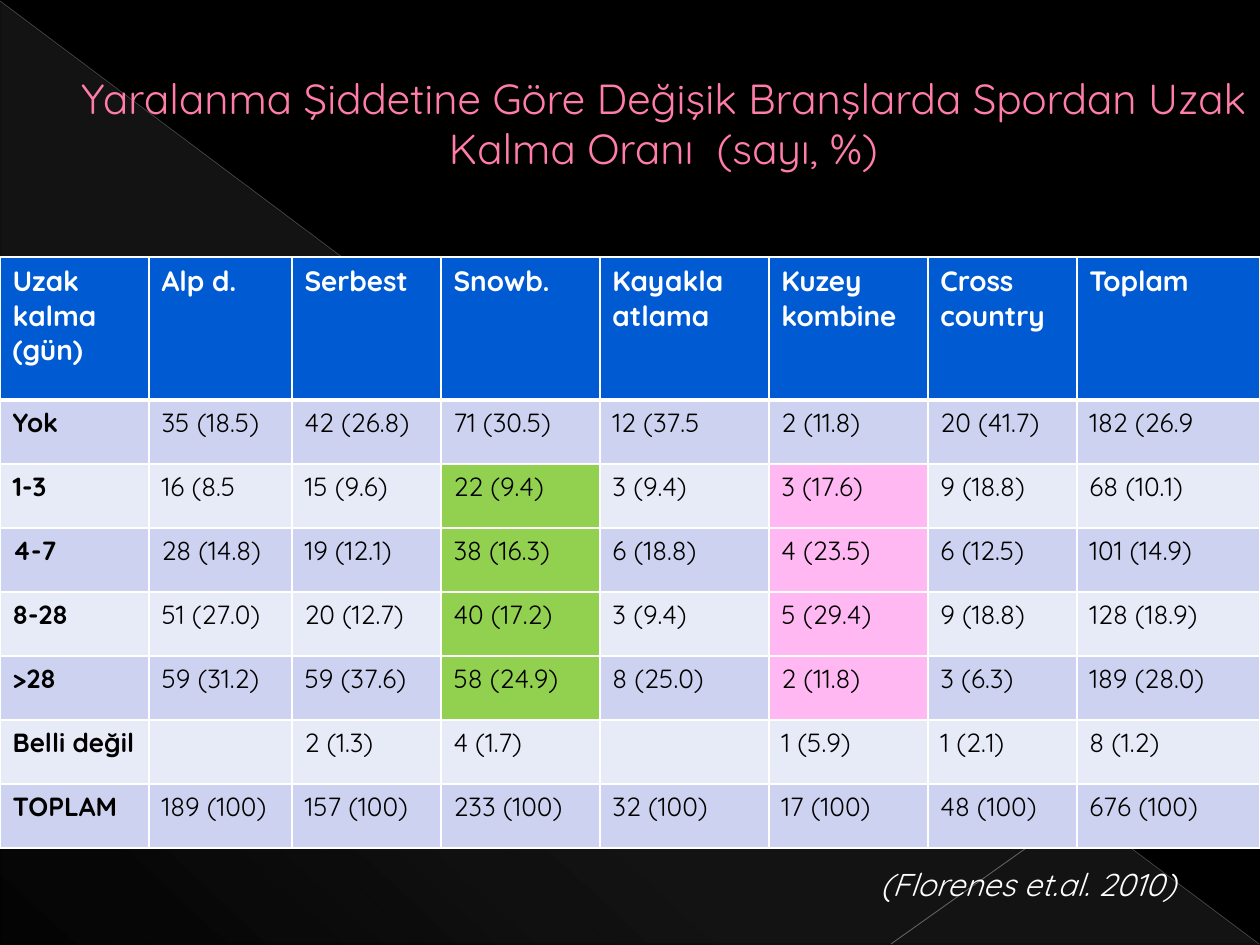
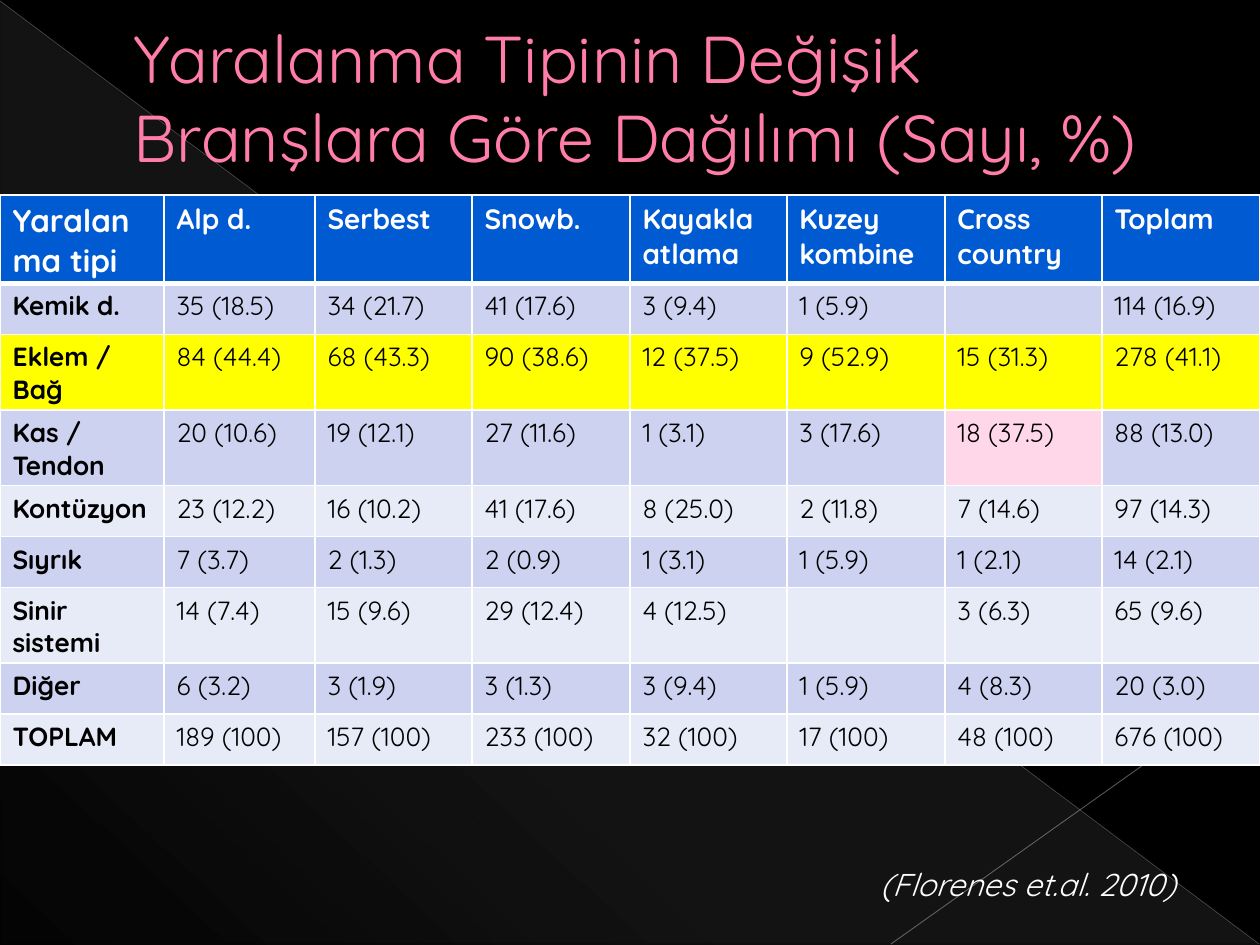
from lxml.etree import SubElement
from pptx import Presentation
from pptx.dml.color import RGBColor
from pptx.enum.shapes import MSO_CONNECTOR, MSO_SHAPE
from pptx.enum.text import MSO_ANCHOR, PP_ALIGN
from pptx.oxml import parse_xml
from pptx.oxml.ns import nsdecls, qn
from pptx.util import Emu, Pt

PX_PER_INCH = 126
WIDTH, HEIGHT = 1260, 945
FONT = "Quicksand"
COLORS = {
    "background": "000000",
    "wedge": "D2D2D2",
    "diagonal": "BFBFBF",
    "corner": "C6C6C6",
    "title": "FF7DA7",
    "white": "FFFFFF",
    "black": "000000",
    "header": "005BD3",
    "band_dark": "CCD2EF",
    "band_light": "E7EAF7",
    "green": "92D050",
    "pink": "FFB8F2",
    "pale_pink": "FFD7E8",
    "yellow": "FFFF00",
}


def px(length):
    return Emu(round(length * 914400 / PX_PER_INCH))


def rgb(name):
    return RGBColor.from_string(COLORS[name])


class Deck:
    """Holds the shared style and the slide being built."""

    def __init__(self):
        self.presentation = Presentation()
        self.presentation.slide_width = px(WIDTH)
        self.presentation.slide_height = px(HEIGHT)
        self.slide = None

    def new_slide(self):
        self.slide = self.presentation.slides.add_slide(self.presentation.slide_layouts[6])
        fill = self.slide.background.fill
        fill.solid()
        fill.fore_color.rgb = rgb("background")
        self.wedge()
        self.line((0, 1), (1259, 944), "diagonal", 0.39, 35)
        self.line((1260, 682), (891, 944), "corner", 0.47, 45)

    def wedge(self):
        """Faint triangle that fades toward the lower left corner."""
        shape = self.slide.shapes.add_shape(
            MSO_SHAPE.RIGHT_TRIANGLE, px(1), px(2), px(1258), px(942))
        shape.shadow.inherit = False
        shape.line.fill.background()
        shape.fill.background()
        stops = "".join(
            f'<a:gs pos="{position * 1000}"><a:srgbClr val="{COLORS["wedge"]}">'
            f'<a:alpha val="{opacity * 1000}"/></a:srgbClr></a:gs>'
            for position, opacity in ((0, 10), (70, 8), (100, 1)))
        gradient = parse_xml(
            f'<a:gradFill {nsdecls("a")} rotWithShape="1"><a:gsLst>{stops}</a:gsLst>'
            f'<a:lin ang="{133 * 60000}" scaled="0"/></a:gradFill>')
        properties = shape.element.spPr
        properties.replace(properties.find(qn("a:noFill")), gradient)

    def line(self, start, end, color, width, opacity):
        connector = self.slide.shapes.add_connector(
            MSO_CONNECTOR.STRAIGHT, *map(px, start + end))
        connector.line.color.rgb = rgb(color)
        connector.line.width = Pt(width)
        properties = connector.element.spPr
        for line_color in properties.iter(qn("a:srgbClr")):
            SubElement(line_color, qn("a:alpha"), val=str(opacity * 1000))
        SubElement(properties, qn("a:effectLst"))

    def style(self, paragraph, size, color, bold=False, italic=False):
        font = paragraph.font
        font.name, font.size = FONT, Pt(size)
        font.bold, font.italic = bold, italic
        font.color.rgb = rgb(color)

    def text(self, content, box, size, color, wrap=True, italic=False):
        frame = self.slide.shapes.add_textbox(*map(px, box)).text_frame
        frame.word_wrap = wrap
        frame.text = content
        self.style(frame.paragraphs[0], size, color, italic=italic)
        return frame

    def title(self, content, box, size, align):
        frame = self.text(content, box, size, "title")
        frame.vertical_anchor = MSO_ANCHOR.MIDDLE
        paragraph = frame.paragraphs[0]
        paragraph.alignment = align
        paragraph_properties = paragraph._p.get_or_add_pPr()
        paragraph_properties.set("marL", str(px(67)))
        paragraph_properties.set("indent", "0")

    def citation(self):
        self.text("(Florenes et.al. 2010)", (868, 859, 340, 50), 18, "white",
                  wrap=False, italic=True)

    def borders(self, cell, top, bottom):
        """White lines on all four sides, placed ahead of the cell fill."""
        properties = cell._tc.get_or_add_tcPr()
        sides = (("L", 1), ("R", 1), ("T", top), ("B", bottom))
        for index, (side, width) in enumerate(sides):
            properties.insert(index, parse_xml(
                f'<a:ln{side} {nsdecls("a")} w="{Pt(width)}"><a:solidFill>'
                f'<a:srgbClr val="{COLORS["white"]}"/></a:solidFill></a:ln{side}>'))

    def table(self, data, top, height, column_widths, row_heights,
              highlights, corner_size=16):
        rows = [line.split("|") for line in data.strip().splitlines()]
        frame = self.slide.shapes.add_table(
            len(rows), len(column_widths), 0, px(top), px(WIDTH), px(height))
        table = frame.table
        table.first_row = table.horz_banding = False
        for column, width in zip(table.columns, column_widths):
            column.width = px(width)
        for row, row_height in zip(table.rows, row_heights):
            row.height = px(row_height)
        frame.height = px(height)

        for row_index, row in enumerate(rows):
            is_header = row_index == 0
            band = "header" if is_header else ("band_light", "band_dark")[row_index % 2]
            for column_index, content in enumerate(row):
                cell = table.cell(row_index, column_index)
                cell.text = content
                cell.fill.solid()
                cell.fill.fore_color.rgb = rgb(
                    highlights.get((row_index, column_index), band))
                self.borders(cell, 3 if row_index == 1 else 1, 3 if is_header else 1)
                size = 16 if is_header else 15
                if row_index == column_index == 0:
                    size = corner_size
                self.style(cell.text_frame.paragraphs[0], size,
                           "white" if is_header else "black",
                           bold=is_header or column_index == 0)


BRANCHES = "Alp d.|Serbest|Snowb.|Kayakla atlama|Kuzey kombine|Cross country|Toplam"
TOTALS = "TOPLAM|189 (100)|157 (100)|233 (100)|32 (100)|17 (100)|48 (100)|676 (100)"

DAYS_AWAY = f"""
Uzak kalma (gün)|{BRANCHES}
Yok|35 (18.5)|42 (26.8)|71 (30.5)|12 (37.5|2 (11.8)|20 (41.7)|182 (26.9
1-3|16 (8.5|15 (9.6)|22 (9.4)|3 (9.4)|3 (17.6)|9 (18.8)|68 (10.1)
4-7|28 (14.8)|19 (12.1)|38 (16.3)|6 (18.8)|4 (23.5)|6 (12.5)|101 (14.9)
8-28|51 (27.0)|20 (12.7)|40 (17.2)|3 (9.4)|5 (29.4)|9 (18.8)|128 (18.9)
>28|59 (31.2)|59 (37.6)|58 (24.9)|8 (25.0)|2 (11.8)|3 (6.3)|189 (28.0)
Belli değil||2 (1.3)|4 (1.7)||1 (5.9)|1 (2.1)|8 (1.2)
{TOTALS}
"""

INJURY_TYPES = f"""
Yaralanma tipi|{BRANCHES}
Kemik d.|35 (18.5)|34 (21.7)|41 (17.6)|3 (9.4)|1 (5.9)||114 (16.9)
Eklem / Bağ|84 (44.4)|68 (43.3)|90 (38.6)|12 (37.5)|9 (52.9)|15 (31.3)|278 (41.1)
Kas / Tendon|20 (10.6)|19 (12.1)|27 (11.6)|1 (3.1)|3 (17.6)|18 (37.5)|88 (13.0)
Kontüzyon|23 (12.2)|16 (10.2)|41 (17.6)|8 (25.0)|2 (11.8)|7 (14.6)|97 (14.3)
Sıyrık|7 (3.7)|2 (1.3)|2 (0.9)|1 (3.1)|1 (5.9)|1 (2.1)|14 (2.1)
Sinir sistemi|14 (7.4)|15 (9.6)|29 (12.4)|4 (12.5)||3 (6.3)|65 (9.6)
Diğer|6 (3.2)|3 (1.9)|3 (1.3)|3 (9.4)|1 (5.9)|4 (8.3)|20 (3.0)
{TOTALS}
"""


def main():
    deck = Deck()

    # Days away from sport
    deck.new_slide()
    deck.title("Yaralanma Şiddetine Göre Değişik Branşlarda Spordan Uzak Kalma Oranı  (sayı, %)",
               (0, 26, 1260, 193), 24, PP_ALIGN.CENTER)
    highlights = {(row, column): color for row in range(2, 6)
                  for column, color in ((3, "green"), (5, "pink"))}
    deck.table(DAYS_AWAY, 257, 592, [149, 143, 149, 159, 169, 159, 149, 183],
               [143] + [64] * 7, highlights)
    deck.citation()

    # Injury types
    deck.new_slide()
    deck.title("Yaralanma Tipinin Değişik Branşlara Göre Dağılımı (Sayı, %)",
               (54, 0, 1134, 193), 37.8, PP_ALIGN.LEFT)
    highlights = {(2, column): "yellow" for column in range(8)}
    highlights[3, 6] = "pale_pink"
    deck.table(INJURY_TYPES, 195, 571, [164, 151] + [157, 158] * 3,
               [51] * 9, highlights, corner_size=18)
    deck.citation()

    deck.presentation.save("out.pptx")


if __name__ == "__main__":
    main()
